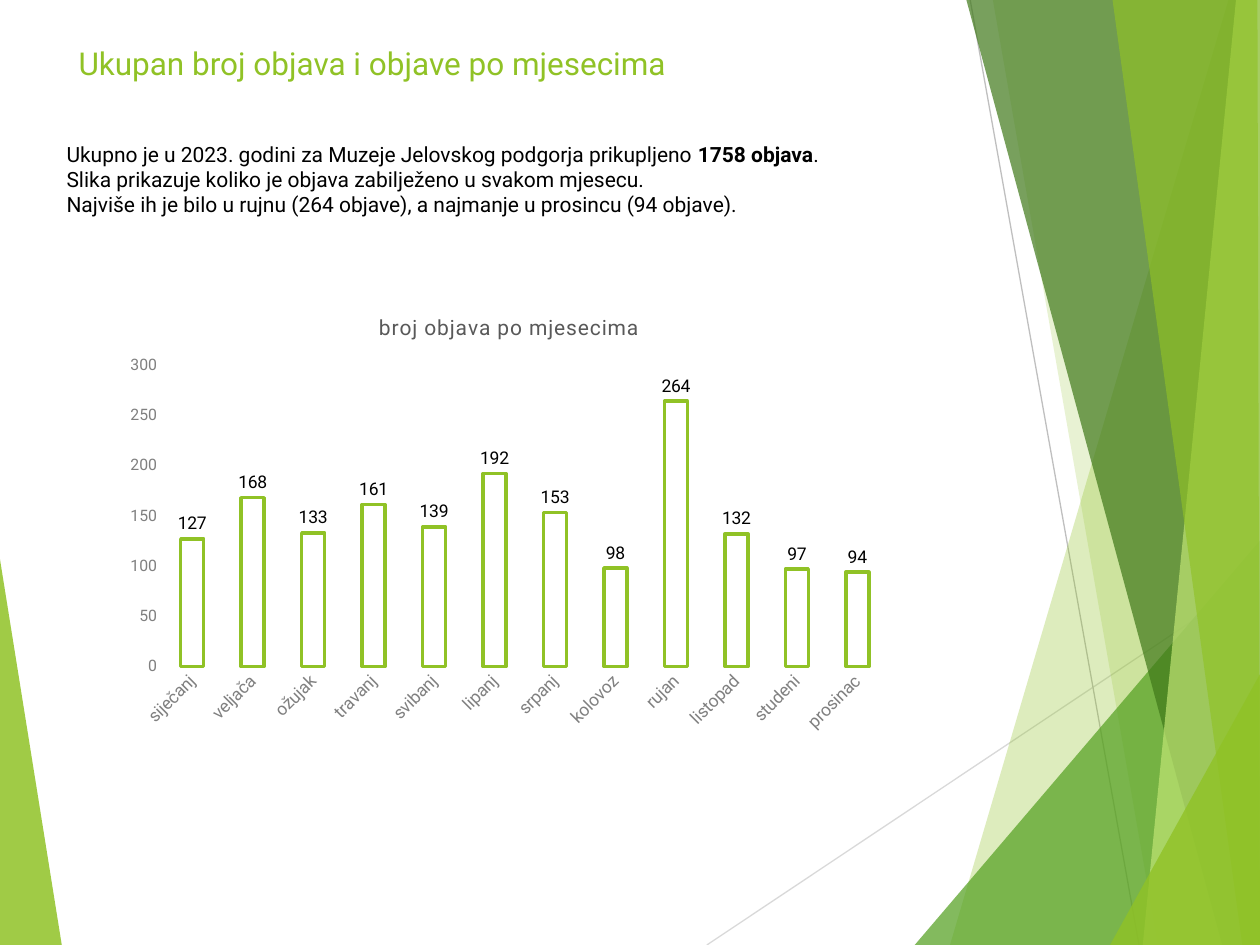
import lxml.etree
import pptx
import pptx.chart.data
import pptx.dml.color
import pptx.enum.chart
import pptx.enum.shapes
import pptx.enum.text
import pptx.oxml.ns
import pptx.util

Inches = pptx.util.Inches
FONT = "Roboto"
GREEN = "90C226"
BLACK = "000000"
GRAY = "808080"

FACETS = [
    ([(0, 4.44), (0.49, 7.5), (0, 7.5)], GREEN, 85),
    ([(9.75, 0), (7.54, 7.5), (10, 7.5), (10, 0)], GREEN, 30),
    ([(7.88, 0), (9.19, 7.5), (10, 7.5), (10, 0)], GREEN, 20),
    ([(7.26, 7.5), (10, 4.29), (10, 7.5)], "54A021", 72),
    ([(7.67, 0), (9.7, 7.5), (10, 7.5), (10, 0)], "3F7819", 70),
    ([(9.81, 0), (9.07, 7.5), (10, 7.5), (10, 0)], "C0E474", 70),
    ([(8.83, 0), (9.86, 7.5), (10, 7.5), (9.98, 0)], GREEN, 65),
    ([(8.81, 7.5), (10, 5.35), (10, 7.5)], GREEN, 80),
]
LINES = [
    ((5.61, 7.5), (10, 4.57), "D9D9D9"),
    ((7.7, 0), (9.04, 7.5), "BFBFBF"),
]
PARAGRAPHS = [
    [
        ("Ukupno je u 2023. godini za Muzeje Jelovskog podgorja prikupljeno ", False),
        ("1758 objava", True),
        (".", False),
    ],
    [("Slika prikazuje koliko je objava zabilježeno u svakom mjesecu.", False)],
    [("Najviše ih je bilo u rujnu (264 objave), a najmanje u prosincu (94 objave).", False)],
]
MONTHLY_POSTS = {
    "siječanj": 127, "veljača": 168, "ožujak": 133, "travanj": 161,
    "svibanj": 139, "lipanj": 192, "srpanj": 153, "kolovoz": 98,
    "rujan": 264, "listopad": 132, "studeni": 97, "prosinac": 94,
}


def color(hex_value):
    return pptx.dml.color.RGBColor.from_string(hex_value)


def set_values(target, values):
    for name, value in values.items():
        setattr(target, name, value)


def format_font(font, size, hex_value, bold=False):
    set_values(font, {"name": FONT, "size": pptx.util.Pt(size), "bold": bold})
    font.color.rgb = color(hex_value)


def find_element(parent, tag):
    return parent.find(".//" + pptx.oxml.ns.qn(tag))


def add_facet(slide, points, hex_value, opacity):
    corners = [(Inches(x), Inches(y)) for x, y in points]
    builder = slide.shapes.build_freeform(*corners[0])
    builder.add_line_segments(corners[1:], close=True)
    shape = builder.convert_to_shape()
    shape.shadow.inherit = False
    shape.fill.solid()
    shape.fill.fore_color.rgb = color(hex_value)
    shape.line.fill.background()
    fill_color = find_element(shape.element.spPr, "a:srgbClr")
    alpha = lxml.etree.SubElement(fill_color, pptx.oxml.ns.qn("a:alpha"))
    alpha.set("val", str(opacity * 1000))


def add_line(slide, start, end, hex_value):
    connector = slide.shapes.add_connector(
        pptx.enum.shapes.MSO_CONNECTOR.STRAIGHT, *map(Inches, start + end)
    )
    connector.line.color.rgb = color(hex_value)
    connector.line.width = pptx.util.Pt(0.75)
    lxml.etree.SubElement(connector.element.spPr, pptx.oxml.ns.qn("a:effectLst"))


def add_title(slide, text):
    title = slide.shapes.title
    set_values(title, {
        "left": Inches(0.2), "top": Inches(0.3),
        "width": Inches(5.51), "height": Inches(0.47),
    })
    set_values(title.text_frame, {
        "text": text,
        "auto_size": pptx.enum.text.MSO_AUTO_SIZE.NONE,
        "vertical_anchor": pptx.enum.text.MSO_ANCHOR.TOP,
    })
    paragraph = title.text_frame.paragraphs[0]
    paragraph.alignment = pptx.enum.text.PP_ALIGN.CENTER
    format_font(paragraph.runs[0].font, 18, GREEN)


def add_summary(slide, paragraphs):
    box = slide.shapes.add_textbox(Inches(0.43), Inches(1.07), Inches(6.26), Inches(0.71))
    frame = box.text_frame
    set_values(frame, {
        "word_wrap": False,
        "auto_size": pptx.enum.text.MSO_AUTO_SIZE.SHAPE_TO_FIT_TEXT,
    })
    for index, runs in enumerate(paragraphs):
        paragraph = frame.add_paragraph() if index else frame.paragraphs[0]
        for text, bold in runs:
            run = paragraph.add_run()
            run.text = text
            format_font(run.font, 12, BLACK, bold)


def format_axis(axis, size):
    set_values(axis, {
        "has_major_gridlines": False,
        "major_tick_mark": pptx.enum.chart.XL_TICK_MARK.NONE,
        "minor_tick_mark": pptx.enum.chart.XL_TICK_MARK.NONE,
    })
    axis.format.line.fill.background()
    format_font(axis.tick_labels.font, size, GRAY)


def add_chart_title(chart, text):
    chart.has_title = True
    run = chart.chart_title.text_frame.paragraphs[0].add_run()
    run.text = text
    format_font(run.font, 12, "595959")
    find_element(chart.chart_title.element, "a:rPr").set("spc", "50")


def add_month_chart(slide, posts):
    data = pptx.chart.data.CategoryChartData()
    data.categories = list(posts)
    data.add_series("Series 1", list(posts.values()))
    chart = slide.shapes.add_chart(
        pptx.enum.chart.XL_CHART_TYPE.COLUMN_CLUSTERED,
        Inches(0.91), Inches(2.33), Inches(6.26), Inches(3.55), data,
    ).chart
    chart.has_legend = False
    format_font(chart.font, 10, BLACK)
    add_chart_title(chart, "broj objava po mjesecima")

    format_axis(chart.category_axis, 10)
    format_axis(chart.value_axis, 9)
    set_values(chart.value_axis, {
        "minimum_scale": 0, "maximum_scale": 300, "major_unit": 50,
    })
    category_axis = find_element(chart.element, "c:catAx")
    find_element(category_axis, "a:bodyPr").set("rot", "-2700000")

    plot = chart.plots[0]
    set_values(plot, {
        "gap_width": 164, "overlap": -35,
        "vary_by_categories": False, "has_data_labels": True,
    })
    set_values(plot.data_labels, {
        "show_value": True,
        "position": pptx.enum.chart.XL_LABEL_POSITION.OUTSIDE_END,
    })
    format_font(plot.data_labels.font, 10, BLACK)
    columns = plot.series[0].format
    columns.fill.background()
    columns.line.color.rgb = color(GREEN)
    columns.line.width = pptx.util.Pt(2)


def main():
    presentation = pptx.Presentation()
    set_values(presentation, {"slide_width": Inches(10), "slide_height": Inches(7.5)})
    slide = presentation.slides.add_slide(presentation.slide_layouts[5])
    left_facet, *right_facets = FACETS
    add_facet(slide, *left_facet)
    for line in LINES:
        add_line(slide, *line)
    for facet in right_facets:
        add_facet(slide, *facet)
    add_title(slide, "Ukupan broj objava i objave po mjesecima")
    add_summary(slide, PARAGRAPHS)
    add_month_chart(slide, MONTHLY_POSTS)
    presentation.save("out.pptx")


if __name__ == "__main__":
    main()
